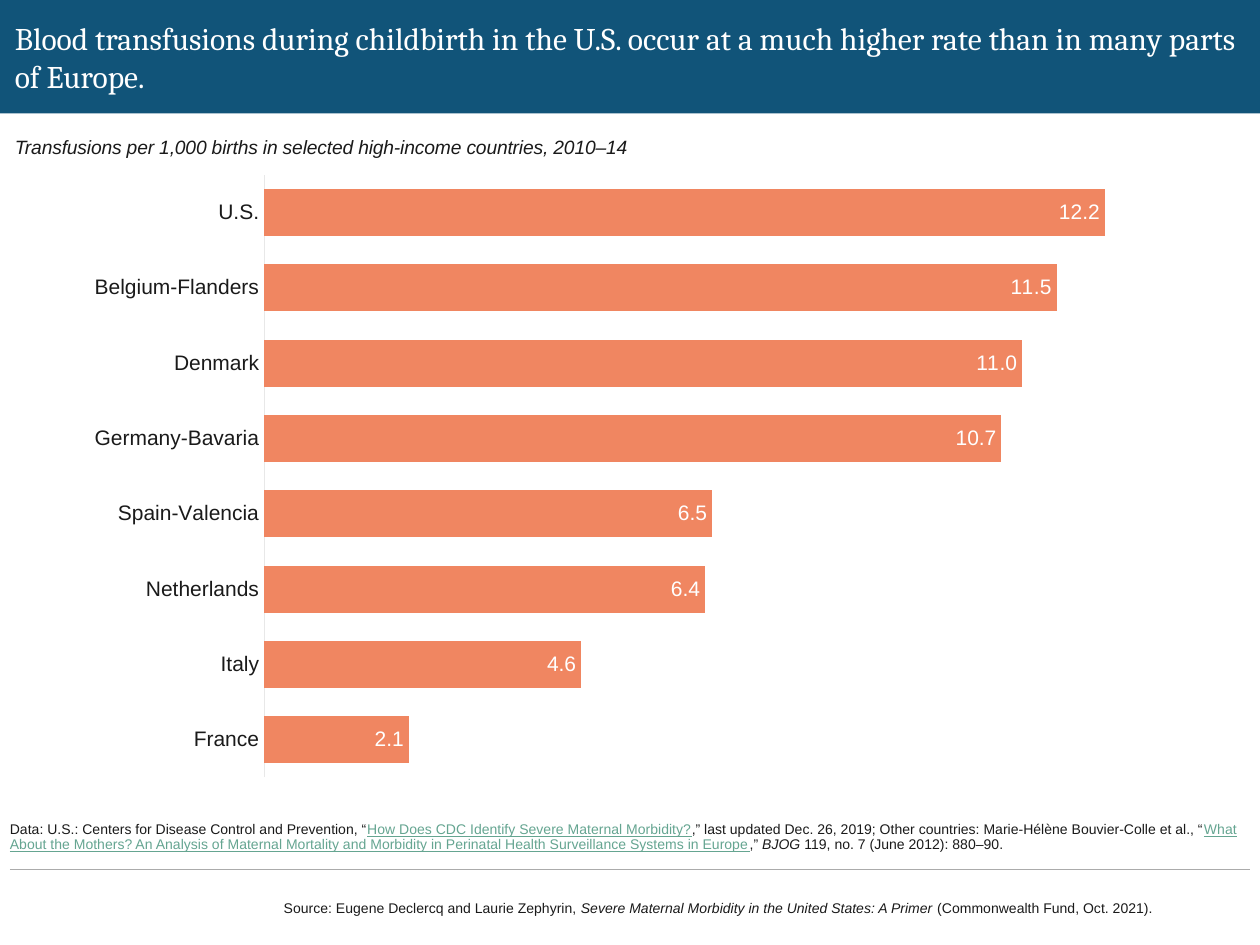
from lxml import etree
from pptx import Presentation
from pptx import util as u
from pptx.chart.data import CategoryChartData
from pptx.dml.color import RGBColor
from pptx.enum import chart as ch, shapes, text
from pptx.oxml.ns import qn

INK, WHITE, NAVY, CORAL = "1A1A1A", "FFFFFF", "115479", "F08661"
LINK, RULE, AXIS = "65A591", "ABABAB", "E8E8E8"

TITLE = ("Blood transfusions during childbirth in the U.S. occur at a much "
         "higher rate than in many parts of Europe.")
SUBTITLE = "Transfusions per 1,000 births in selected high-income countries, 2010–14"
RATES = [
    ("U.S.", 12.2),
    ("Belgium-Flanders", 11.5),
    ("Denmark", 11.0),
    ("Germany-Bavaria", 10.7),
    ("Spain-Valencia", 6.5),
    ("Netherlands", 6.4),
    ("Italy", 4.6),
    ("France", 2.1),
]
# Rich text is a list of (words, style); style is "", "italic" or "link".
DATA_NOTE = [
    ("Data: U.S.: Centers for Disease Control and Prevention, “", ""),
    ("How Does CDC Identify Severe Maternal Morbidity?", "link"),
    (",” last updated Dec. 26, 2019; Other countries: "
     "Marie-Hélène Bouvier-Colle et al., “", ""),
    ("What About the Mothers? An Analysis of Maternal Mortality and Morbidity "
     "in Perinatal Health Surveillance Systems in Europe", "link"),
    (",” ", ""),
    ("BJOG", "italic"),
    (" 119, no. 7 (June 2012): 880–90.", ""),
]
SOURCE = [
    ("Source: Eugene Declercq and Laurie Zephyrin, ", ""),
    ("Severe Maternal Morbidity in the United States: A Primer ", "italic"),
    ("(Commonwealth Fund, Oct. 2021).", ""),
]

WIDTH, HEIGHT = 25.4, 19.05
EDGE, INDENT, BANNER = 0.2, 0.3, 2.29
INNER = WIDTH - 2 * EDGE
PLOT = {"x": 0.205, "y": 0, "w": 0.778, "h": 0.998}


def rgb(code):
    return RGBColor.from_string(code)


def style_font(font, size, color, name="Arial"):
    font.size, font.name = u.Pt(size), name
    font.color.rgb = rgb(color)


def add_text(slide, left, top, width, height, runs, size=8, color=INK,
             name="Arial", anchor=text.MSO_ANCHOR.MIDDLE, line=None, after=None,
             tracking=None):
    frame = slide.shapes.add_textbox(
        u.Cm(left), u.Cm(top), u.Cm(width), u.Cm(height)).text_frame
    frame.word_wrap = True
    frame.vertical_anchor = anchor
    frame.margin_left = frame.margin_right = 0
    frame.margin_top = frame.margin_bottom = 0
    paragraph = frame.paragraphs[0]
    if line:
        paragraph.line_spacing = line
    if after:
        paragraph.space_after = u.Pt(after)
    for words, style in runs:
        run = paragraph.add_run()
        run.text = words
        style_font(run.font, size, LINK if style == "link" else color, name)
        run.font.italic = style == "italic"
        run.font.underline = style == "link"
        if tracking:
            run.font._element.set("spc", str(round(tracking * 100)))


def add_banner(slide):
    banner = slide.shapes.add_shape(
        shapes.MSO_SHAPE.RECTANGLE, 0, 0, u.Cm(WIDTH), u.Cm(BANNER))
    banner.shadow.inherit = False
    banner.fill.solid()
    banner.fill.fore_color.rgb = rgb(NAVY)
    banner.line.fill.background()


def add_rule(slide, y):
    rule = slide.shapes.add_connector(
        shapes.MSO_CONNECTOR.STRAIGHT,
        u.Cm(EDGE), u.Cm(y), u.Cm(WIDTH - EDGE), u.Cm(y))
    rule.line.color.rgb = rgb(RULE)
    rule.line.width = u.Pt(0.75)
    etree.SubElement(rule._element.spPr, qn("a:effectLst"))


def fix_plot_area(chart):
    """Pin the inner plot area to the fractions in PLOT."""
    area = chart._chartSpace.chart.plotArea
    for old in area.findall(qn("c:layout")):
        area.remove(old)
    layout = etree.Element(qn("c:layout"))
    manual = etree.SubElement(layout, qn("c:manualLayout"))
    settings = {"layoutTarget": "inner", "xMode": "edge", "yMode": "edge", **PLOT}
    for tag, value in settings.items():
        etree.SubElement(manual, qn("c:" + tag)).set("val", str(value))
    area.insert(0, layout)


def add_rate_chart(slide, top, height):
    data = CategoryChartData(number_format="0.0")
    countries, rates = zip(*reversed(RATES))  # bars stack from the bottom up
    data.categories = countries
    data.add_series("Series 1", rates)
    chart = slide.shapes.add_chart(
        ch.XL_CHART_TYPE.BAR_CLUSTERED, u.Cm(EDGE), u.Cm(top),
        u.Cm(INNER), u.Cm(height), data).chart
    chart.has_legend = chart.has_title = False
    style_font(chart.font, 12, INK)
    fix_plot_area(chart)

    country_axis, rate_axis = chart.category_axis, chart.value_axis
    country_axis.major_tick_mark = ch.XL_TICK_MARK.NONE
    country_axis.format.line.color.rgb = rgb(AXIS)
    country_axis.format.line.width = u.Pt(0.75)
    style_font(country_axis.tick_labels.font, 12, INK)
    rate_axis.minimum_scale, rate_axis.maximum_scale = 0, 14
    rate_axis.has_major_gridlines = False
    rate_axis.visible = False

    bars = chart.plots[0]
    bars.gap_width = 60
    bars.vary_by_categories = False
    fill = bars.series[0].format.fill
    fill.solid()
    fill.fore_color.rgb = rgb(CORAL)
    bars.has_data_labels = True
    labels = bars.data_labels
    labels.show_value = True
    labels.position = ch.XL_LABEL_POSITION.INSIDE_END
    labels.number_format, labels.number_format_is_linked = "0.0", False
    style_font(labels.font, 12, WHITE)


def main():
    deck = Presentation()
    deck.slide_width, deck.slide_height = u.Cm(WIDTH), u.Cm(HEIGHT)
    slide = deck.slides.add_slide(deck.slide_layouts[6])

    add_banner(slide)
    add_rule(slide, 17.53)
    add_text(slide, 5.72, 18.14, WIDTH - EDGE - 5.72, 0.33, SOURCE)
    add_rate_chart(slide, 3.51, 12.19)
    add_text(slide, EDGE, 15.82, INNER, 1.37, DATA_NOTE,
             anchor=text.MSO_ANCHOR.BOTTOM, line=0.9, after=6)
    add_text(slide, INDENT, 0, INNER, BANNER, [(TITLE, "")],
             size=18, color=WHITE, name="Cambria")
    add_text(slide, INDENT, 2.72, 13.89, 0.69, [(SUBTITLE, "italic")], size=11,
             anchor=text.MSO_ANCHOR.TOP, tracking=-0.1)
    deck.save("out.pptx")


if __name__ == "__main__":
    main()
